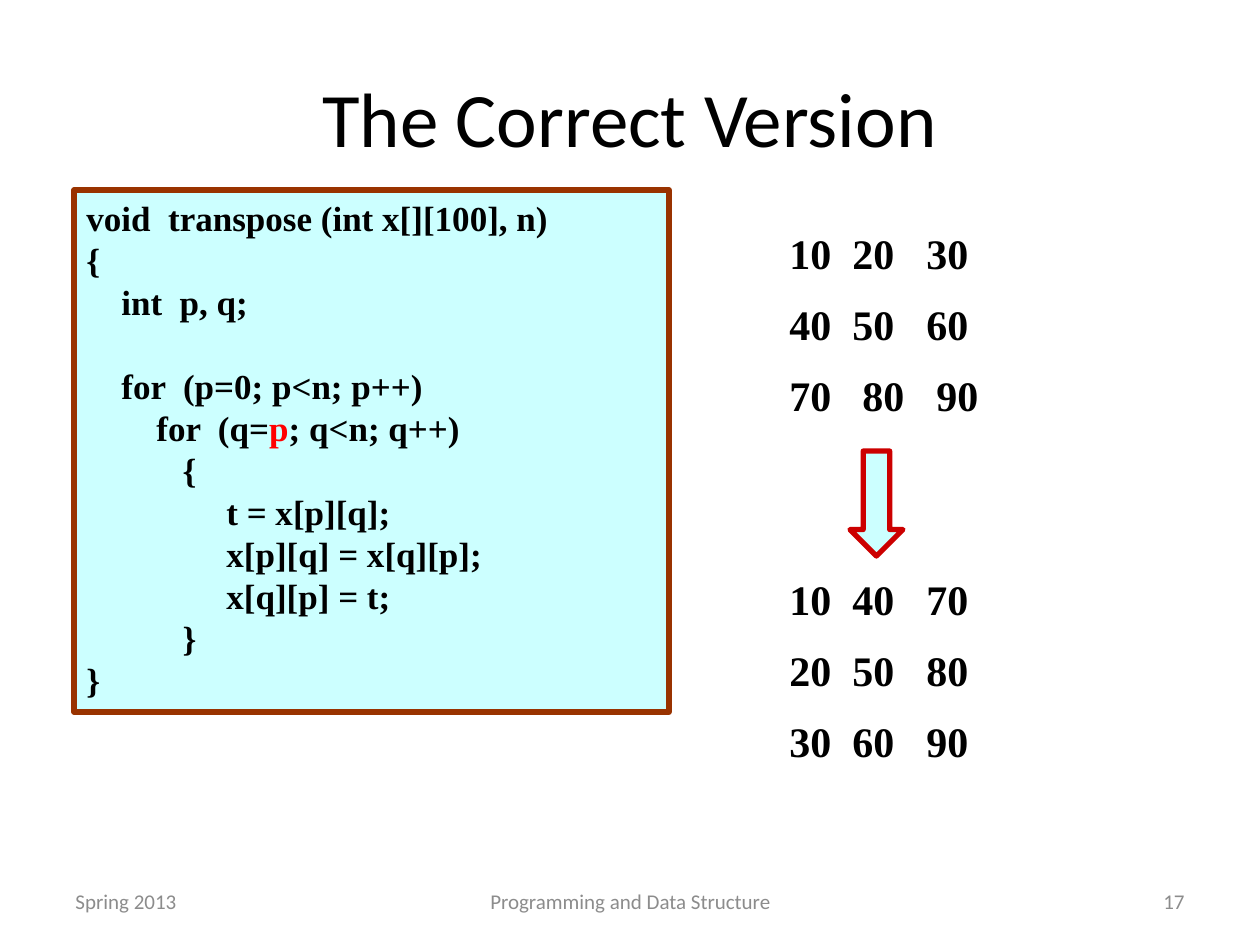
import dataclasses

import pptx
import pptx.dml.color
import pptx.enum.shapes
import pptx.enum.text
import pptx.oxml.ns
import pptx.util
from lxml import etree

SHAPE = pptx.enum.shapes.MSO_SHAPE
ANCHOR = pptx.enum.text.MSO_ANCHOR
ALIGN = pptx.enum.text.PP_ALIGN


@dataclasses.dataclass(frozen=True)
class Theme:
    heading_font: str = "Calibri"
    code_font: str = "Times New Roman"
    ink: str = "000000"
    muted: str = "8C8C8C"
    highlight: str = "FF0000"
    panel: str = "CCFFFF"
    panel_edge: str = "993300"
    arrow_edge: str = "CC0000"
    title_size: int = 44
    code_size: int = 20
    matrix_size: int = 24
    footer_size: int = 12
    edge_width: int = 3
    line_ratio: float = 1.2


def px(length):
    return pptx.util.Emu(round(length * 914400 / 126))


def rgb(value):
    return pptx.dml.color.RGBColor.from_string(value)


class SlideBuilder:
    def __init__(self, slide, theme):
        self.slide = slide
        self.theme = theme

    def run(self, paragraph, words, font, size, color, bold=False):
        piece = paragraph.add_run()
        piece.text = words
        piece.font.name = font
        piece.font.size = pptx.util.Pt(size)
        piece.font.bold = bold
        piece.font.color.rgb = rgb(color)

    def text_box(self, box, anchor):
        frame = self.slide.shapes.add_textbox(*map(px, box)).text_frame
        frame.word_wrap = True
        frame.vertical_anchor = anchor
        return frame

    def label(self, box, words, size, color, align):
        paragraph = self.text_box(box, ANCHOR.MIDDLE).paragraphs[0]
        paragraph.alignment = align
        self.run(paragraph, words, self.theme.heading_font, size, color)

    def outlined(self, kind, box, edge):
        shape = self.slide.shapes.add_shape(kind, *map(px, box))
        shape.shadow.inherit = False
        shape.fill.solid()
        shape.fill.fore_color.rgb = rgb(self.theme.panel)
        shape.line.color.rgb = rgb(edge)
        shape.line.width = pptx.util.Pt(self.theme.edge_width)
        return shape

    def next_line(self, frame, index, size, space_before):
        paragraph = frame.add_paragraph() if index else frame.paragraphs[0]
        paragraph.alignment = ALIGN.LEFT
        paragraph.line_spacing = pptx.util.Pt(size * self.theme.line_ratio)
        paragraph.space_before = pptx.util.Pt(space_before)
        return paragraph

    def code(self, box, lines):
        theme = self.theme
        frame = self.outlined(SHAPE.RECTANGLE, box, theme.panel_edge).text_frame
        frame.word_wrap = True
        frame.vertical_anchor = ANCHOR.TOP
        space_width = theme.code_size / 4
        for index, (indent, lines_skipped, pieces) in enumerate(lines):
            gap = lines_skipped * theme.code_size * theme.line_ratio
            paragraph = self.next_line(frame, index, theme.code_size, gap)
            properties = paragraph._p.get_or_add_pPr()
            properties.set("marL", str(pptx.util.Pt(indent * space_width)))
            properties.set("indent", "0")
            for words, color in pieces:
                self.run(paragraph, words, theme.code_font, theme.code_size, color, True)

    def matrix(self, box, rows):
        theme = self.theme
        frame = self.text_box(box, ANCHOR.TOP)
        for index, (values, stops) in enumerate(rows):
            gap = theme.matrix_size / 2 if index else 0
            paragraph = self.next_line(frame, index, theme.matrix_size, gap)
            tabs = etree.SubElement(paragraph._p.get_or_add_pPr(), pptx.oxml.ns.qn("a:tabLst"))
            for stop in stops:
                etree.SubElement(tabs, pptx.oxml.ns.qn("a:tab"), pos=str(px(stop)), algn="l")
            words = "\t".join(map(str, values))
            self.run(paragraph, words, theme.code_font, theme.matrix_size, theme.ink, True)

    def down_arrow(self, box):
        self.outlined(SHAPE.DOWN_ARROW, box, self.theme.arrow_edge)


def main():
    theme = Theme()
    deck = pptx.Presentation()
    deck.slide_width, deck.slide_height = px(1260), px(945)
    page = SlideBuilder(deck.slides.add_slide(deck.slide_layouts[6]), theme)

    page.label((63, 38, 1134, 157), "The Correct Version", theme.title_size, theme.ink, ALIGN.CENTER)

    footers = [
        (63, 294, "Spring 2013", ALIGN.LEFT),
        (431, 399, "Programming and Data Structure", ALIGN.CENTER),
        (903, 294, "17", ALIGN.RIGHT),
    ]
    for left, width, words, align in footers:
        page.label((left, 876, width, 50), words, theme.footer_size, theme.muted, align)

    def plain(indent, words, lines_skipped=0):
        return indent, lines_skipped, [(words, theme.ink)]

    page.code((74, 190, 595, 522), [
        plain(0, "void  transpose (int x[][100], n)"),
        plain(0, "{"),
        plain(4, "int  p, q;"),
        plain(4, "for  (p=0; p<n; p++)", lines_skipped=1),
        (8, 0, [("for  (q=", theme.ink), ("p", theme.highlight), ("; q<n; q++)", theme.ink)]),
        plain(11, "{"),
        plain(16, "t = x[p][q];"),
        plain(16, "x[p][q] = x[q][p];"),
        plain(16, "x[q][p] = t;"),
        plain(11, "}"),
        plain(0, "}"),
    ])

    columns = (63, 137)
    wide_columns = (73, 147)
    page.matrix((777, 221, 420, 214), [
        ((10, 20, 30), columns),
        ((40, 50, 60), columns),
        ((70, 80, 90), wide_columns),
    ])
    page.matrix((777, 567, 420, 214), [
        ((10, 40, 70), columns),
        ((20, 50, 80), columns),
        ((30, 60, 90), columns),
    ])
    page.down_arrow((850, 451, 53, 105))

    deck.save("out.pptx")


if __name__ == "__main__":
    main()
